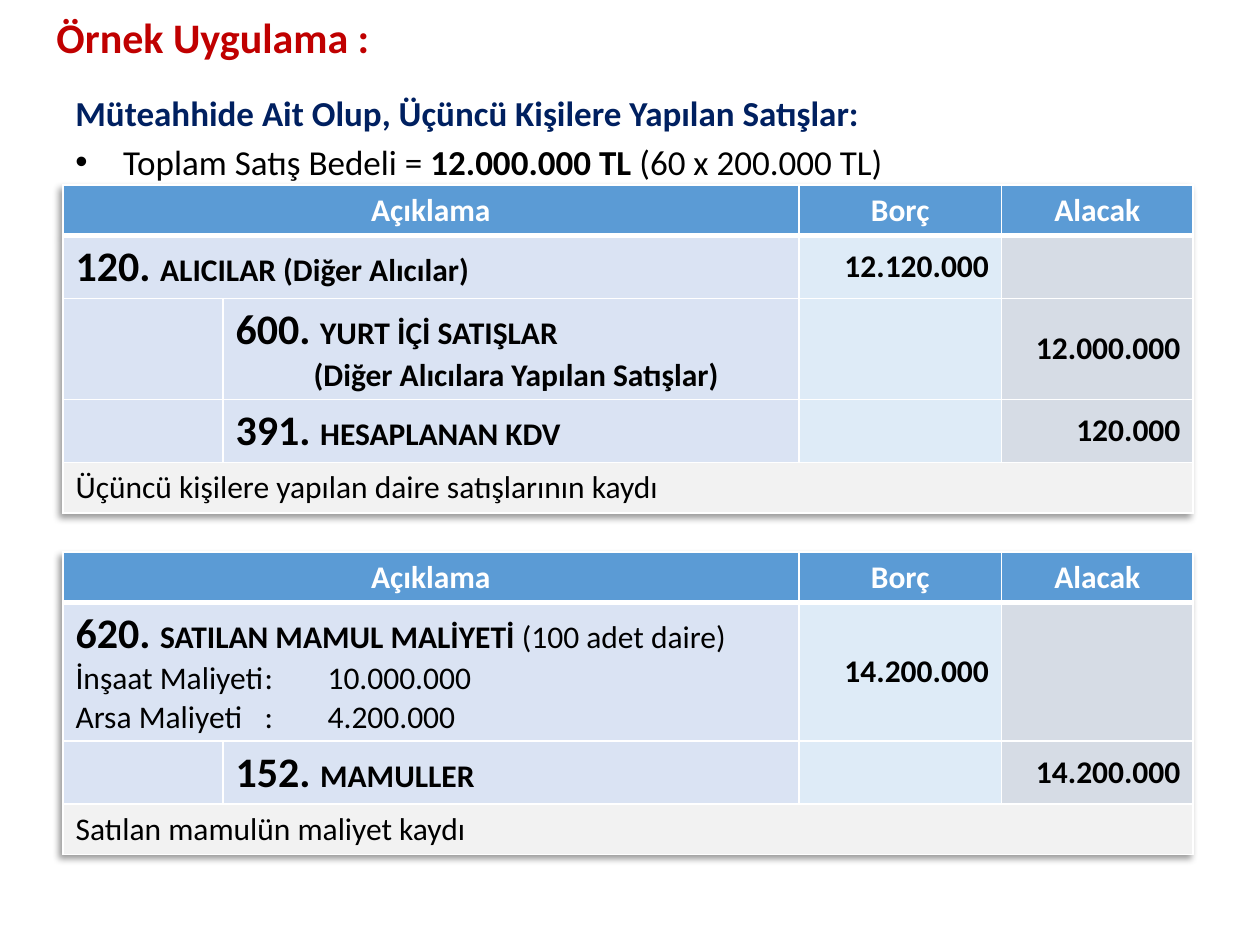
"""Build the journal entry slide for sales to third parties."""
from dataclasses import dataclass

from lxml.etree import SubElement
from pptx import Presentation
from pptx.dml.color import RGBColor
from pptx.enum.text import MSO_ANCHOR, PP_ALIGN
from pptx.oxml.ns import qn
from pptx.util import Inches, Pt

COLORS = {
    "title": "C00000", "heading": "002060", "text": "000000", "white": "FFFFFF",
    "header": "5B9BD5", "account": "DAE3F3", "debit": "DEEBF7",
    "credit": "D6DCE5", "note": "F2F2F2",
}
COLUMN_FILLS = ("account", "account", "debit", "credit")
COLUMN_WIDTHS = (1.27, 4.57, 1.61, 1.52)


@dataclass
class Span:
    text: str
    size: float = 18
    bold: bool = True
    color: str = "text"


@dataclass
class Line:
    spans: list[Span]
    align: PP_ALIGN = PP_ALIGN.LEFT
    margin: float = 0
    hanging: float = 0
    tabs: tuple[tuple[float, str], ...] = ()
    before: float = 0
    bullet: bool = False
    spacing: float = 1


@dataclass
class Entry:
    lines: list[Line]
    amount: str
    is_debit: bool
    height: float = 0.39


@dataclass
class Journal:
    top: float
    height: float
    entries: list[Entry]
    note: str


def account(code: str, name: str, *extra: Span) -> Line:
    """Return the line naming an account."""
    return Line([Span(f"{code}. ", 24), Span(name), *extra])


def cost(label: str, amount: str) -> Line:
    """Return a cost line with its amount aligned right."""
    return Line([Span(f"{label}\t:\t{amount}", bold=False)], tabs=((1.66, "l"), (2.91, "r")))


def write(frame, lines: list[Line]) -> None:
    """Fill a text frame with formatted lines."""
    for index, line in enumerate(lines):
        para = frame.paragraphs[0] if index == 0 else frame.add_paragraph()
        para.alignment = line.align
        para.space_before = Pt(line.before)
        para.line_spacing = line.spacing
        properties = para._p.get_or_add_pPr()
        properties.set("marL", str(Inches(line.margin)))
        properties.set("indent", str(Inches(-line.hanging)))
        if line.bullet:
            SubElement(properties, qn("a:buFont"), typeface="Arial")
            SubElement(properties, qn("a:buChar"), char="•")
        if line.tabs:
            stops = SubElement(properties, qn("a:tabLst"))
            for position, side in line.tabs:
                SubElement(stops, qn("a:tab"), pos=str(Inches(position)), algn=side)
        for span in line.spans:
            run = para.add_run()
            run.text = span.text
            run.font.name = "Calibri"
            run.font.size = Pt(span.size)
            run.font.bold = span.bold
            run.font.color.rgb = RGBColor.from_string(COLORS[span.color])


def add_text(page, left: float, top: float, height: float, lines: list[Line], anchor: MSO_ANCHOR) -> None:
    """Add a wrapped text box."""
    box = page.shapes.add_textbox(Inches(left), Inches(top), Inches(9), Inches(height))
    box.text_frame.word_wrap = True
    box.text_frame.vertical_anchor = anchor
    write(box.text_frame, lines)


def style_cell(cell, fill: str, bottom: float = 1) -> None:
    """Give a cell its white borders and fill."""
    properties = cell._tc.get_or_add_tcPr()
    for side, width in (("L", 1), ("R", 1), ("T", 1), ("B", bottom)):
        border = SubElement(properties, qn(f"a:ln{side}"), w=str(Pt(width)))
        solid = SubElement(border, qn("a:solidFill"))
        SubElement(solid, qn("a:srgbClr"), val=COLORS["white"])
    cell.fill.solid()
    cell.fill.fore_color.rgb = RGBColor.from_string(COLORS[fill])
    cell.vertical_anchor = MSO_ANCHOR.MIDDLE


def add_shadow(table) -> None:
    """Add a soft shadow below and left of a table."""
    effects = SubElement(table._tbl.tblPr, qn("a:effectLst"))
    shadow = SubElement(effects, qn("a:outerShdw"), blurRad=str(Pt(4)), dist=str(Pt(3)),
                        dir="8100000", algn="tr", rotWithShape="0")
    color = SubElement(shadow, qn("a:srgbClr"), val=COLORS["text"])
    SubElement(color, qn("a:alpha"), val="40000")


def add_journal(page, journal: Journal) -> None:
    """Add a journal table with header, entries and note."""
    heights = [0.31, *(entry.height for entry in journal.entries), 0.39]
    last = len(heights) - 1
    frame = page.shapes.add_table(len(heights), 4, Inches(0.5), Inches(journal.top),
                                  Inches(8.98), Inches(journal.height))
    table = frame.table
    table.first_row = table.horz_banding = False
    # pptx-style effects sit ahead of the style id
    add_shadow(table)
    style_id = table._tbl.tblPr.find(qn("a:tableStyleId"))
    if style_id is not None:
        table._tbl.tblPr.append(style_id)
    for column, width in zip(table.columns, COLUMN_WIDTHS):
        column.width = Inches(width)
    for number, height in enumerate(heights):
        table.rows[number].height = Inches(height)
        for column, fill in enumerate(COLUMN_FILLS):
            kind = {0: "header", last: "note"}.get(number, fill)
            style_cell(table.cell(number, column), kind, 3 if number == 0 else 1)
    frame.height = Inches(journal.height)

    table.cell(0, 0).merge(table.cell(0, 1))
    for column, label in ((0, "Açıklama"), (2, "Borç"), (3, "Alacak")):
        write(table.cell(0, column).text_frame, [Line([Span(label, color="white")], PP_ALIGN.CENTER)])
    for number, entry in enumerate(journal.entries, 1):
        if entry.is_debit:
            table.cell(number, 0).merge(table.cell(number, 1))
        write(table.cell(number, 0 if entry.is_debit else 1).text_frame, entry.lines)
        amount = table.cell(number, 2 if entry.is_debit else 3)
        write(amount.text_frame, [Line([Span(entry.amount)], PP_ALIGN.RIGHT)])
    table.cell(last, 0).merge(table.cell(last, 3))
    table.cell(last, 0).vertical_anchor = MSO_ANCHOR.TOP
    write(table.cell(last, 0).text_frame, [Line([Span(journal.note, bold=False)])])


JOURNALS = (
    Journal(1.47, 2.52, [
        Entry([account("120", "ALICILAR (Diğer Alıcılar)")], "12.120.000", True, 0.47),
        Entry([account("600", "YURT İÇİ SATIŞLAR"),
               Line([Span("(Diğer Alıcılara Yapılan Satışlar)")], margin=0.62)], "12.000.000", False),
        Entry([account("391", "HESAPLANAN KDV")], "120.000", False),
    ], "Üçüncü kişilere yapılan daire satışlarının kaydı"),
    Journal(4.38, 2.32, [
        Entry([account("620", "SATILAN MAMUL MALİYETİ ", Span("(100 adet daire)", bold=False)),
               cost("İnşaat Maliyeti", "10.000.000"), cost("Arsa Maliyeti", "4.200.000")],
              "14.200.000", True, 0.47),
        Entry([account("152", "MAMULLER")], "14.200.000", False),
    ], "Satılan mamulün maliyet kaydı"),
)


def main() -> None:
    """Build and save the deck."""
    deck = Presentation()
    deck.slide_width, deck.slide_height = Inches(10), Inches(7.5)
    page = deck.slides.add_slide(deck.slide_layouts[6])
    add_text(page, 0.35, 0.13, 0.38,
             [Line([Span("Örnek Uygulama :", 24, color="title")], spacing=0.9)], MSO_ANCHOR.MIDDLE)
    add_text(page, 0.5, 0.68, 0.79, [
        Line([Span("Müteahhide Ait Olup, Üçüncü Kişilere Yapılan Satışlar:", 20, color="heading")], before=4),
        Line([Span("Toplam Satış Bedeli = ", 20, False), Span("12.000.000 TL ", 20),
              Span("(60 x 200.000 TL)", 20, False)], margin=0.38, hanging=0.38, before=4, bullet=True),
    ], MSO_ANCHOR.TOP)
    for journal in JOURNALS:
        add_journal(page, journal)
    deck.save("out.pptx")


if __name__ == "__main__":
    main()
